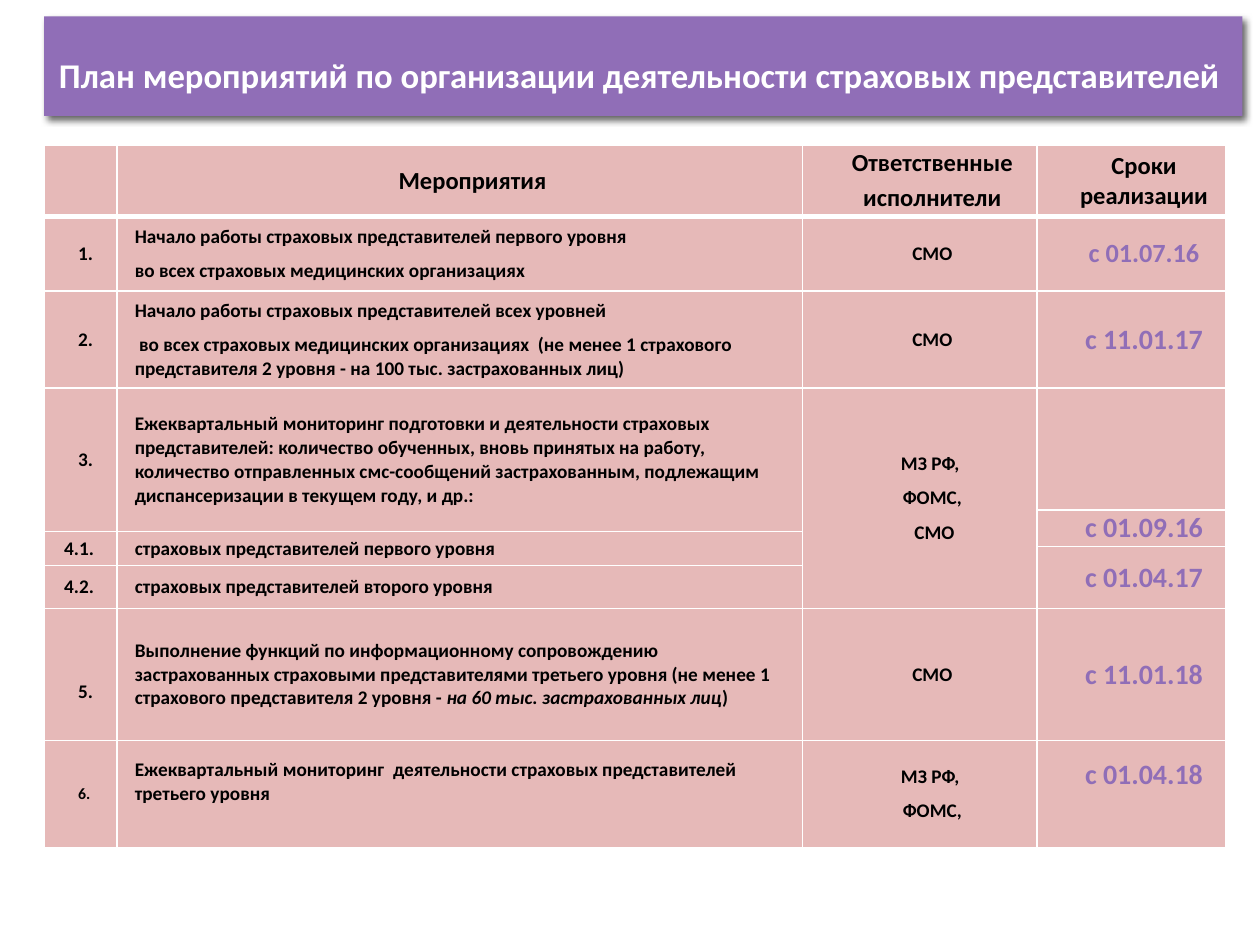
from lxml import etree
from pptx import Presentation
from pptx.dml.color import RGBColor
from pptx.enum.text import MSO_ANCHOR, MSO_AUTO_SIZE, PP_ALIGN
from pptx.oxml.ns import qn
from pptx.util import Inches, Pt

LEFT, CENTER = PP_ALIGN.LEFT, PP_ALIGN.CENTER
MIDDLE = MSO_ANCHOR.MIDDLE
NO_FIT = MSO_AUTO_SIZE.NONE

TITLE_ONLY = 5
PURPLE, PINK, BLACK, WHITE = "906EB7", "E6B9B8", "000000", "FFFFFF"


def rgb(value):
    return RGBColor.from_string(value)


def apply(target, values):
    for name, value in values.items():
        setattr(target, name, value)


class PlanSlide:
    font_name = "Calibri"

    def __init__(self, presentation):
        self.slide = presentation.slides.add_slide(
            presentation.slide_layouts[TITLE_ONLY])

    def style_run(self, run, size, color, italic=False):
        apply(run.font, {"name": self.font_name, "size": Pt(size),
                         "bold": True, "italic": italic})
        run.font.color.rgb = rgb(color)

    def add_shadow(self, shape):
        effects = etree.SubElement(shape._element.spPr, qn("a:effectLst"))
        shadow = etree.SubElement(
            effects, qn("a:outerShdw"), blurRad=str(Pt(4)), dist=str(Pt(3)),
            dir=str(45 * 60000), algn="tl", rotWithShape="0")
        color = etree.SubElement(shadow, qn("a:srgbClr"), val=BLACK)
        etree.SubElement(color, qn("a:alpha"), val="60000")

    def add_title(self, text, left, top, width, height):
        title = self.slide.shapes.title
        apply(title, {"left": Inches(left), "top": Inches(top),
                      "width": Inches(width), "height": Inches(height)})
        title.fill.solid()
        title.fill.fore_color.rgb = rgb(PURPLE)
        self.add_shadow(title)
        apply(title.text_frame, {"vertical_anchor": MIDDLE,
                                 "word_wrap": True, "auto_size": NO_FIT})
        paragraph = title.text_frame.paragraphs[0]
        apply(paragraph, {"alignment": CENTER, "line_spacing": Pt(33.6)})
        run = paragraph.add_run()
        run.text = text
        self.style_run(run, 19.8, WHITE)

    def add_table(self, left, top, widths, heights):
        table = self.slide.shapes.add_table(
            len(heights), len(widths), Inches(left), Inches(top),
            Inches(sum(widths)), Inches(sum(heights))).table
        for column, width in zip(table.columns, widths):
            column.width = Inches(width)
        for row, height in zip(table.rows, heights):
            row.height = Inches(height)
        for row in range(len(heights)):
            for column in range(len(widths)):
                self.style_cell(table.cell(row, column), row)
        return table

    def style_cell(self, cell, row):
        # The line under the header is thicker than the rest
        borders = {"L": 1, "R": 1, "T": 3 if row == 1 else 1,
                   "B": 3 if row == 0 else 1}
        properties = cell._tc.get_or_add_tcPr()
        for side, width in borders.items():
            line = etree.SubElement(properties, qn("a:ln" + side),
                                    w=str(Pt(width)))
            fill = etree.SubElement(line, qn("a:solidFill"))
            etree.SubElement(fill, qn("a:srgbClr"), val=WHITE)
        cell.fill.solid()
        cell.fill.fore_color.rgb = rgb(PINK)
        apply(cell, {"vertical_anchor": MIDDLE,
                     "margin_left": Inches(0.07), "margin_right": Inches(0.07),
                     "margin_top": 0, "margin_bottom": 0})

    def write_cell(self, cell, text, size=11, color=BLACK, align=LEFT,
                   indent=0.2, after=3, top=0, bottom=0):
        """Lines become paragraphs; text between asterisks is italic."""
        apply(cell, {"margin_top": Inches(top), "margin_bottom": Inches(bottom)})
        for number, line in enumerate(text.split("\n")):
            frame = cell.text_frame
            paragraph = frame.add_paragraph() if number else frame.paragraphs[0]
            apply(paragraph, {"alignment": align, "space_before": Pt(3),
                              "space_after": Pt(after)})
            properties = paragraph._p.get_or_add_pPr()
            properties.set("marL", str(Inches(indent)))
            properties.set("indent", "0")
            for part, words in enumerate(line.split("*")):
                run = paragraph.add_run()
                run.text = words
                self.style_run(run, size, color, italic=part % 2 == 1)


HEADERS = ["", "Мероприятия", "Ответственные\nисполнители", "Сроки реализации"]
HEADER_STYLE = {"size": 14, "align": CENTER, "after": 0}

COLUMN_STYLES = [
    {},
    {"indent": 0.07},
    {"align": CENTER},
    {"align": CENTER, "size": 16, "color": PURPLE},
]

# Each column: (row, rows spanned, text, style changes)
NUMBERS = [
    (1, 1, "1.", {}),
    (2, 1, "2.", {}),
    (3, 2, "3.", {}),
    (5, 2, "4.1.", {"indent": 0.09}),
    (7, 1, "4.2.", {"indent": 0.09}),
    (8, 1, "5.", {"top": 0.28}),
    (9, 1, "6.", {"size": 9}),
]
MEASURES = [
    (1, 1, "Начало работы страховых представителей первого уровня\n"
           "во всех страховых медицинских организациях", {}),
    (2, 1, "Начало работы страховых представителей всех уровней\n"
           " во всех страховых медицинских организациях  (не менее 1 страхового "
           "представителя 2 уровня - на 100 тыс. застрахованных лиц)", {}),
    (3, 2, "Ежеквартальный мониторинг подготовки и деятельности страховых "
           "представителей: количество обученных, вновь принятых на работу, "
           "количество отправленных смс-сообщений застрахованным, подлежащим "
           "диспансеризации в текущем году, и др.:", {}),
    (5, 2, "страховых представителей первого уровня", {}),
    (7, 1, "страховых представителей второго уровня", {}),
    (8, 1, "Выполнение функций по информационному сопровождению "
           "застрахованных страховыми представителями третьего уровня "
           "(не менее 1 страхового представителя 2 уровня - "
           "*на 60 тыс. застрахованных лиц*)", {}),
    (9, 1, "Ежеквартальный мониторинг  деятельности страховых "
           "представителей третьего уровня", {"bottom": 0.19}),
]
RESPONSIBLE = [
    (1, 1, "СМО", {}),
    (2, 1, "СМО", {}),
    (3, 5, "МЗ РФ, \nФОМС,\n СМО", {}),
    (8, 1, "СМО", {}),
    (9, 1, "МЗ РФ, \nФОМС,", {}),
]
DATES = [
    (1, 1, "с 01.07.16", {"size": 15}),
    (2, 1, "с 11.01.17", {}),
    (4, 2, "с 01.09.16", {}),
    (6, 2, "с 01.04.17", {}),
    (8, 1, "с 11.01.18", {}),
    (9, 1, "с 01.04.18", {"bottom": 0.31}),
]


def main():
    presentation = Presentation()
    presentation.slide_width = Inches(10)
    presentation.slide_height = Inches(7.5)
    plan = PlanSlide(presentation)

    # Title banner
    plan.add_title("План мероприятий по организации деятельности "
                   "страховых представителей ", 0.35, 0.13, 9.51, 0.79)

    # Plan table
    schedule = plan.add_table(
        0.35, 1.15, [0.58, 5.44, 1.86, 1.5],
        [0.57, 0.59, 0.77, 0.97, 0.17, 0.12, 0.15, 0.34, 1.05, 0.85])
    for column, header in enumerate(HEADERS):
        if header:
            plan.write_cell(schedule.cell(0, column), header, **HEADER_STYLE)
    for column, entries in enumerate([NUMBERS, MEASURES, RESPONSIBLE, DATES]):
        for row, span, text, changes in entries:
            cell = schedule.cell(row, column)
            if span > 1:
                cell.merge(schedule.cell(row + span - 1, column))
            plan.write_cell(cell, text, **{**COLUMN_STYLES[column], **changes})

    presentation.save("out.pptx")


if __name__ == "__main__":
    main()
